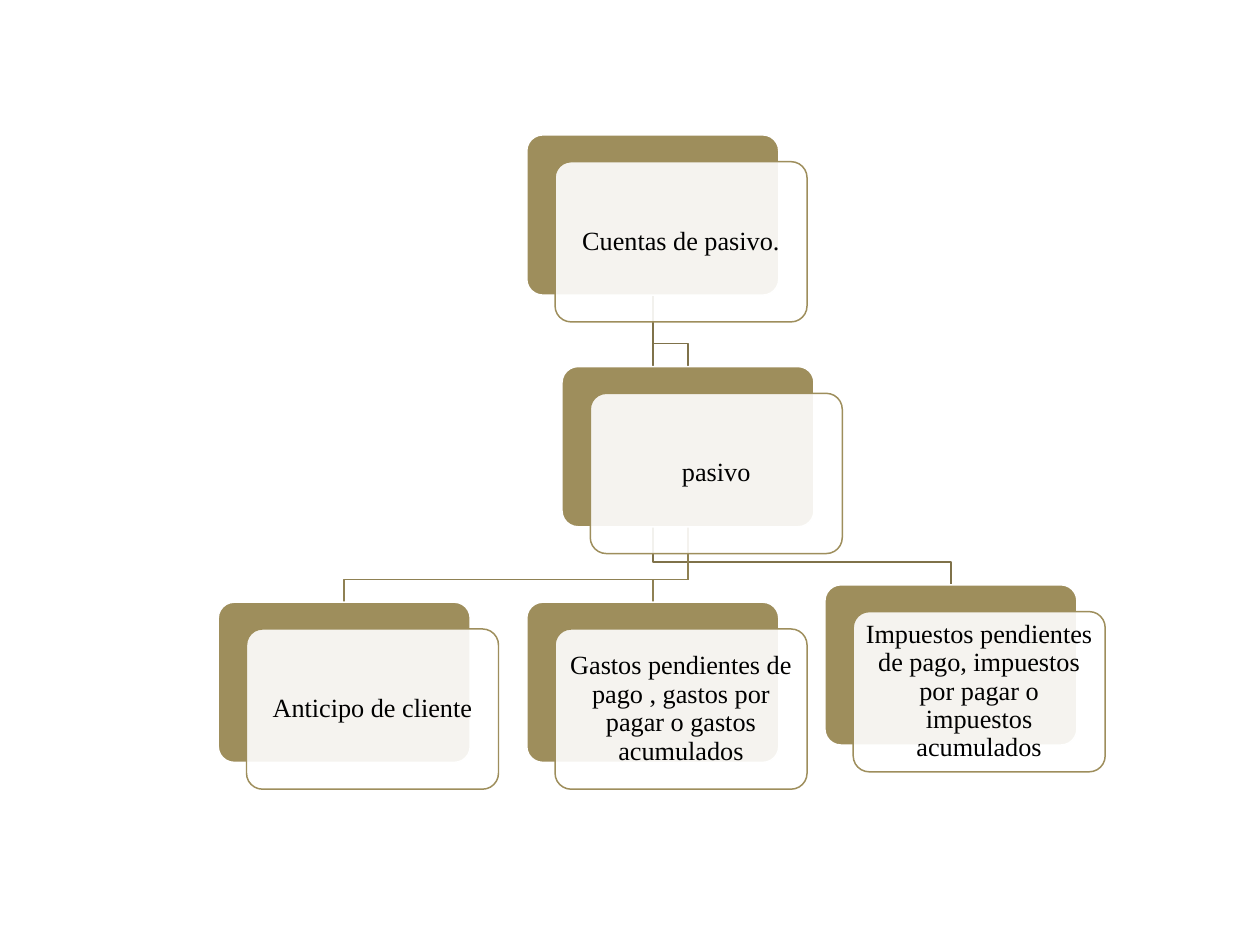
from dataclasses import dataclass

from lxml.etree import SubElement
from pptx import Presentation
from pptx.dml.color import RGBColor
from pptx.enum.shapes import MSO_SHAPE as Preset
from pptx.enum.text import MSO_ANCHOR as Anchor, PP_ALIGN as Align
from pptx.oxml.ns import qn
from pptx.util import Cm, Pt

COLORS = {
    "gold": "9E8E5C",
    "upper_link": "7F724A",
    "lower_link": "8F8153",
    "white": "FFFFFF",
    "black": "000000",
}
FONT = "Times New Roman"
CARD_W, CARD_H = Cm(5.08), Cm(3.23)
OFFSET_X, OFFSET_Y = Cm(0.57), Cm(0.54)  # front card relative to back card
BEND = Cm(0.46)  # height of a link's last segment
INSET = Cm(0.15)
LINE_WIDTH = Pt(0.85)


@dataclass(frozen=True)
class Account:
    """A pair of stacked cards, placed by its back card in centimetres."""
    left: float
    top: float
    label: str

    @property
    def center(self) -> int:
        return Cm(self.left) + CARD_W // 2

    @property
    def bottom(self) -> int:
        return Cm(self.top) + CARD_H


@dataclass(frozen=True)
class Link:
    parent: Account
    child: Account
    color: str


def rgb(name: str) -> RGBColor:
    return RGBColor.from_string(COLORS[name])


def style_line(shape, color: str) -> None:
    shape.shadow.inherit = False
    shape.line.color.rgb = rgb(color)
    shape.line.width = LINE_WIDTH


def draw_link(slide, link: Link) -> None:
    start, end = link.parent, link.child
    child_top = Cm(end.top)
    bend_y = child_top - BEND
    builder = slide.shapes.build_freeform(start.center, start.bottom)
    builder.add_line_segments(
        [(start.center, bend_y), (end.center, bend_y), (end.center, child_top)],
        close=False,
    )
    elbow = builder.convert_to_shape()
    elbow.fill.background()
    style_line(elbow, link.color)


def draw_card(slide, left: int, top: int, fill: str, line: str):
    card = slide.shapes.add_shape(Preset.ROUNDED_RECTANGLE, left, top, CARD_W, CARD_H)
    card.adjustments[0] = 0.1
    card.fill.solid()
    card.fill.fore_color.rgb = rgb(fill)
    style_line(card, line)
    return card


def draw_account(slide, account: Account) -> None:
    left, top = Cm(account.left), Cm(account.top)
    draw_card(slide, left, top, "gold", "white")
    front = draw_card(slide, left + OFFSET_X, top + OFFSET_Y, "white", "gold")

    # Let the back card show through at 10 %
    fill_color = front.element.spPr.find(qn("a:solidFill"))[0]
    SubElement(fill_color, qn("a:alpha"), val="90000")

    frame = front.text_frame
    frame.word_wrap = True
    frame.vertical_anchor = Anchor.MIDDLE
    frame.margin_left = frame.margin_right = INSET
    frame.margin_top = frame.margin_bottom = INSET
    label = frame.paragraphs[0]
    label.text = account.label
    label.alignment = Align.CENTER
    label.line_spacing = 0.9
    label.font.name = FONT
    label.font.size = Pt(15)
    label.font.color.rgb = rgb("black")


def main() -> None:
    deck = Presentation()
    deck.slide_width, deck.slide_height = Cm(25.4), Cm(19.05)
    slide = deck.slides.add_slide(deck.slide_layouts[6])

    # Accounts of the chart
    cuentas = Account(10.62, 2.72, "Cuentas de pasivo.")
    pasivo = Account(11.33, 7.39, "pasivo")
    anticipo = Account(4.4, 12.14, "Anticipo de cliente")
    gastos = Account(
        10.62, 12.14, "Gastos pendientes de pago , gastos por pagar o gastos acumulados"
    )
    impuestos = Account(
        16.63, 11.79,
        "Impuestos pendientes de pago, impuestos por pagar o impuestos acumulados",
    )

    # Links lie behind the cards
    for link in (
        Link(cuentas, impuestos, "upper_link"),
        Link(pasivo, gastos, "lower_link"),
        Link(pasivo, anticipo, "lower_link"),
        Link(cuentas, pasivo, "upper_link"),
    ):
        draw_link(slide, link)

    for account in (cuentas, pasivo, anticipo, gastos, impuestos):
        draw_account(slide, account)

    deck.save("out.pptx")


if __name__ == "__main__":
    main()
